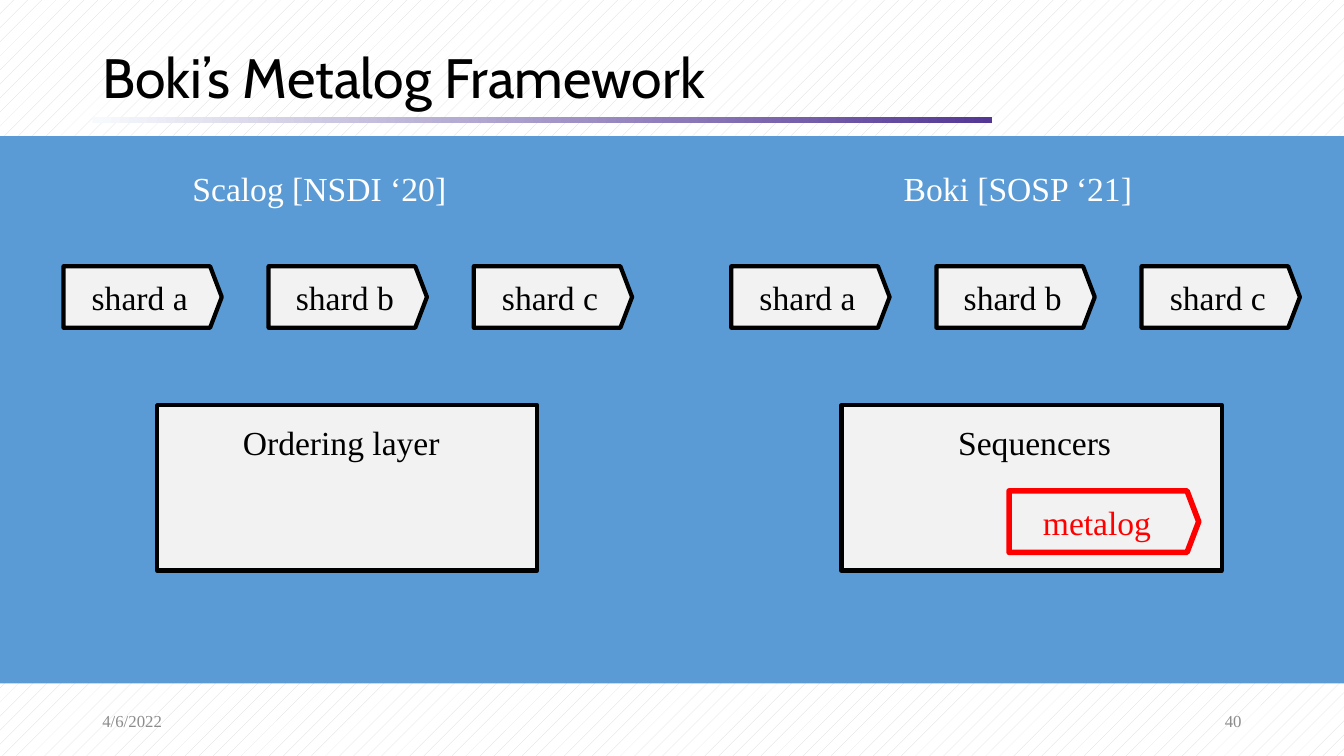
import pptx
import pptx.util
import pptx.dml.color
import pptx.enum.dml
import pptx.enum.shapes
import pptx.enum.text

Cm = pptx.util.Cm
SHAPE = pptx.enum.shapes.MSO_SHAPE
ALIGN = pptx.enum.text.PP_ALIGN
ANCHOR = pptx.enum.text.MSO_ANCHOR
SERIF = "Times New Roman"


def rgb(color):
    return pptx.dml.color.RGBColor.from_string(color)


def write(sp, text, size=24, color="000000", font=SERIF, align=ALIGN.CENTER, anchor=ANCHOR.MIDDLE):
    """Fill a shape or text box with one formatted paragraph."""
    tf = sp.text_frame
    tf.text = text
    tf.word_wrap = True
    tf.vertical_anchor = anchor
    p = tf.paragraphs[0]
    p.alignment = align
    r = p.runs[0]
    r.font.name = font
    r.font.size = pptx.util.Pt(size)
    r.font.color.rgb = rgb(color)


prs = pptx.Presentation()
prs.slide_width, prs.slide_height = Cm(33.87), Cm(19.05)
s = prs.slides.add_slide(prs.slide_layouts[6])

bg = s.background.fill
bg.patterned()
bg.pattern = pptx.enum.dml.MSO_PATTERN.PERCENT_5
bg.fore_color.rgb = rgb("D9D9D9")
bg.back_color.rgb = rgb("FFFFFF")

# Title with its underline
underline = s.shapes.add_shape(SHAPE.RECTANGLE, Cm(2.33), Cm(2.95), Cm(22.67), Cm(0.14))
underline.shadow.inherit = False
underline.line.fill.background()
underline.fill.gradient()
underline.fill.gradient_angle = 0
for stop, position, color in zip(underline.fill.gradient_stops, (0, 1), ("F7FAFD", "543795")):
    stop.position = position
    stop.color.rgb = rgb(color)

title = s.shapes.add_textbox(Cm(2.33), Cm(1.09), Cm(29.21), Cm(1.9))
write(title, "Boki’s Metalog Framework", 39.6, font="Cabin", align=ALIGN.LEFT)
title.text_frame.paragraphs[0].line_spacing = 0.9

# Footer
for left, text, align in ((2.33, "4/6/2022", ALIGN.LEFT), (23.92, "40", ALIGN.RIGHT)):
    footer = s.shapes.add_textbox(Cm(left), Cm(17.65), Cm(7.62), Cm(1.01))
    write(footer, text, 12, "8C8C8C", align=align)

panel = s.shapes.add_shape(SHAPE.RECTANGLE, 0, Cm(3.43), prs.slide_width, Cm(13.79))
panel.shadow.inherit = False
panel.fill.solid()
panel.fill.fore_color.rgb = rgb("5B9BD5")
panel.line.fill.background()

# Headings of the two systems
for left, text in ((4.47, "Scalog [NSDI ‘20]"), (22.07, "Boki [SOSP ‘21]")):
    heading = s.shapes.add_textbox(Cm(left), Cm(4.11), Cm(7.16), Cm(1.27))
    write(heading, text, color="FFFFFF", anchor=ANCHOR.TOP)

# Boxes: kind, left, top, width, height, text, colour, line width, left and right inset
boxes = [
    (SHAPE.PENTAGON, first + 5.17 * i, 6.71, 3.99, 1.55, f"shard {name}", "000000", 3, 0, 0)
    for first in (1.6, 18.43)
    for i, name in enumerate("abc")
]
boxes += [
    (SHAPE.RECTANGLE, 3.96, 10.21, 9.58, 4.17, "Ordering layer", "000000", 3, 0, 0.3),
    (SHAPE.RECTANGLE, 21.21, 10.21, 9.58, 4.17, "Sequencers", "000000", 3, 0.15, 0),
    (SHAPE.PENTAGON, 25.43, 12.37, 4.78, 1.55, "metalog", "FF0000", 4, 0, 0.2),
]
for kind, left, top, width, height, text, color, weight, inset_left, inset_right in boxes:
    box = s.shapes.add_shape(kind, Cm(left), Cm(top), Cm(width), Cm(height))
    box.shadow.inherit = False
    box.fill.solid()
    box.fill.fore_color.rgb = rgb("F2F2F2")
    box.line.color.rgb = rgb(color)
    box.line.width = pptx.util.Pt(weight)
    tf = box.text_frame
    tf.margin_left, tf.margin_right = Cm(inset_left), Cm(inset_right)
    if kind == SHAPE.PENTAGON:
        box.adjustments[0] = 0.19
        tf.margin_top = tf.margin_bottom = 0
        write(box, text, color=color)
    else:
        tf.margin_top = Cm(0.43)
        write(box, text, color=color, anchor=ANCHOR.TOP)

prs.save("out.pptx")
